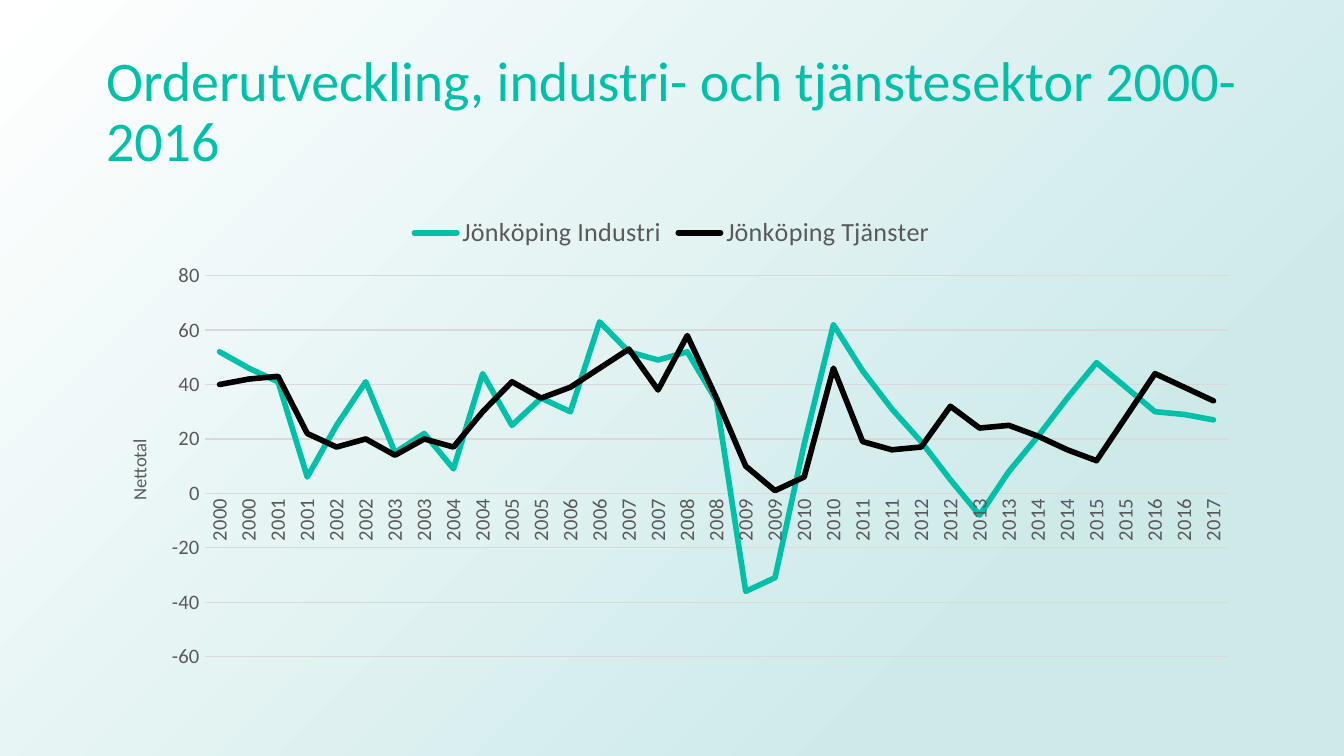
import pptx
import pptx.chart.data
import pptx.dml.color
import pptx.enum.chart
import pptx.enum.shapes
import pptx.enum.text
import pptx.oxml
import pptx.oxml.ns
import pptx.util

Cm, Pt = pptx.util.Cm, pptx.util.Pt
FONT = "Calibri"
TEAL, BLACK, GREY, PALE = "00C0A9", "000000", "595959", "D9D9D9"
TITLE = "Orderutveckling, industri- och tjänstesektor 2000-2016"
AXIS_TITLE = "Nettotal"
YEARS = [str(2000 + i // 2) for i in range(35)]
SERIES = [
    ("Jönköping Industri", TEAL,
     [52, 46, 41, 6, 25, 41, 15, 22, 9, 44, 25, 35, 30, 63, 52, 49, 52, 34,
      -36, -31, 18, 62, 45, 31, 19, 5, -8, 8, 21, 35, 48, 39, 30, 29, 27]),
    ("Jönköping Tjänster", BLACK,
     [40, 42, 43, 22, 17, 20, 14, 20, 17, 30, 41, 35, 39, 46, 53, 38, 58, 35,
      10, 1, 6, 46, 19, 16, 17, 32, 24, 25, 21, 16, 12, 28, 44, 39, 34]),
]
PLOT_BOX = {"x": 0.097, "y": 0.155, "w": 0.883, "h": 0.797}
AXIS_TITLE_BOX = {"x": 0.027, "y": 0.49}
NS = pptx.oxml.ns.nsdecls


def rgb(value):
    return pptx.dml.color.RGBColor.from_string(value)


def style_font(font, size, color):
    font.name, font.size, font.bold = FONT, Pt(size), False
    font.color.rgb = rgb(color)


def style_line(line, color, width):
    line.color.rgb = rgb(color)
    line.width = Pt(width)


def add_background(s, title):
    sp = s.shapes.add_shape(pptx.enum.shapes.MSO_SHAPE.RECTANGLE, 0, 0,
                            prs.slide_width, prs.slide_height)
    sp.shadow.inherit = False
    sp.line.fill.background()
    sp.fill.solid()
    solid = sp.element.spPr.find(pptx.oxml.ns.qn("a:solidFill"))
    grad = pptx.oxml.parse_xml(
        f'<a:gradFill {NS("a")} rotWithShape="1"><a:gsLst>'
        '<a:gs pos="23000"><a:srgbClr val="CDEAE9"/></a:gs>'
        '<a:gs pos="100000"><a:srgbClr val="FFFFFF"/></a:gs></a:gsLst>'
        '<a:path path="circle"><a:fillToRect l="100000" t="100000"/></a:path>'
        '<a:tileRect r="-100000" b="-100000"/></a:gradFill>')
    solid.getparent().replace(solid, grad)
    title.element.addprevious(sp.element)


def set_layout(parent, box, before, inner=False):
    for old in parent.findall(pptx.oxml.ns.qn("c:layout")):
        parent.remove(old)
    target = '<c:layoutTarget val="inner"/>' if inner else ""
    modes = "".join(f'<c:{k}Mode val="edge"/>' for k in "xy")
    sizes = "".join(f'<c:{k} val="{v}"/>' for k, v in box.items())
    layout = pptx.oxml.parse_xml(
        f'<c:layout {NS("c")}><c:manualLayout>{target}{modes}{sizes}'
        '</c:manualLayout></c:layout>')
    parent.find(pptx.oxml.ns.qn(before)).addprevious(layout)


def turn_up(body):
    body.set("rot", "-5400000")
    body.set("vert", "horz")


def add_line_chart(s):
    data = pptx.chart.data.CategoryChartData(number_format="0")
    data.categories = YEARS
    for name, _, values in SERIES:
        data.add_series(name, values)
    chart = s.shapes.add_chart(pptx.enum.chart.XL_CHART_TYPE.LINE, Cm(1.75), Cm(3.81),
                               Cm(21.9), Cm(9.04), data).chart
    style_font(chart.font, 10, BLACK)
    chart.has_title = False
    chart.has_legend = True
    chart.legend.position = pptx.enum.chart.XL_LEGEND_POSITION.TOP
    chart.legend.include_in_layout = False
    style_font(chart.legend.font, 14, GREY)

    plot = chart.plots[0]
    plot.vary_by_categories = False
    for series, (_, color, _) in zip(plot.series, SERIES):
        series.smooth = False
        series.marker.style = pptx.enum.chart.XL_MARKER_STYLE.NONE
        style_line(series.format.line, color, 3)
        for ln in series.format.element.iter(pptx.oxml.ns.qn("a:ln")) if hasattr(series.format, "element") else ():
            ln.set("cap", "rnd")

    cat, val = chart.category_axis, chart.value_axis
    for axis in (cat, val):
        axis.major_tick_mark = axis.minor_tick_mark = pptx.enum.chart.XL_TICK_MARK.NONE
        style_font(axis.tick_labels.font, 11, GREY)
    style_line(cat.format.line, PALE, 0.75)
    turn_up(cat._element.txPr.bodyPr)
    val.minimum_scale, val.maximum_scale, val.major_unit = -60, 80, 20
    val.format.line.fill.background()
    val.has_major_gridlines = True
    style_line(val.major_gridlines.format.line, PALE, 0.75)
    val.tick_labels.number_format = "0"
    val.tick_labels.number_format_is_linked = False

    tf = val.axis_title.text_frame
    r = tf.paragraphs[0].add_run()
    r.text = AXIS_TITLE
    style_font(r.font, 10, GREY)
    turn_up(tf._txBody.bodyPr)
    set_layout(val.axis_title._element, AXIS_TITLE_BOX, "c:overlay")
    set_layout(chart._chartSpace.chart.plotArea, PLOT_BOX, "c:lineChart", inner=True)


prs = pptx.Presentation()
prs.slide_width, prs.slide_height = Cm(25.4), Cm(14.29)
s = prs.slides.add_slide(prs.slide_layouts[5])
title = s.shapes.title
title.left, title.top, title.width, title.height = Cm(1.75), Cm(0.76), Cm(21.9), Cm(2.77)
tf = title.text_frame
tf.word_wrap = True
tf.vertical_anchor = pptx.enum.text.MSO_ANCHOR.MIDDLE
p = tf.paragraphs[0]
p.alignment = pptx.enum.text.PP_ALIGN.LEFT
p.line_spacing = 0.9
r = p.add_run()
r.text = TITLE
style_font(r.font, 30, TEAL)
add_background(s, title)
add_line_chart(s)
prs.save("out.pptx")
